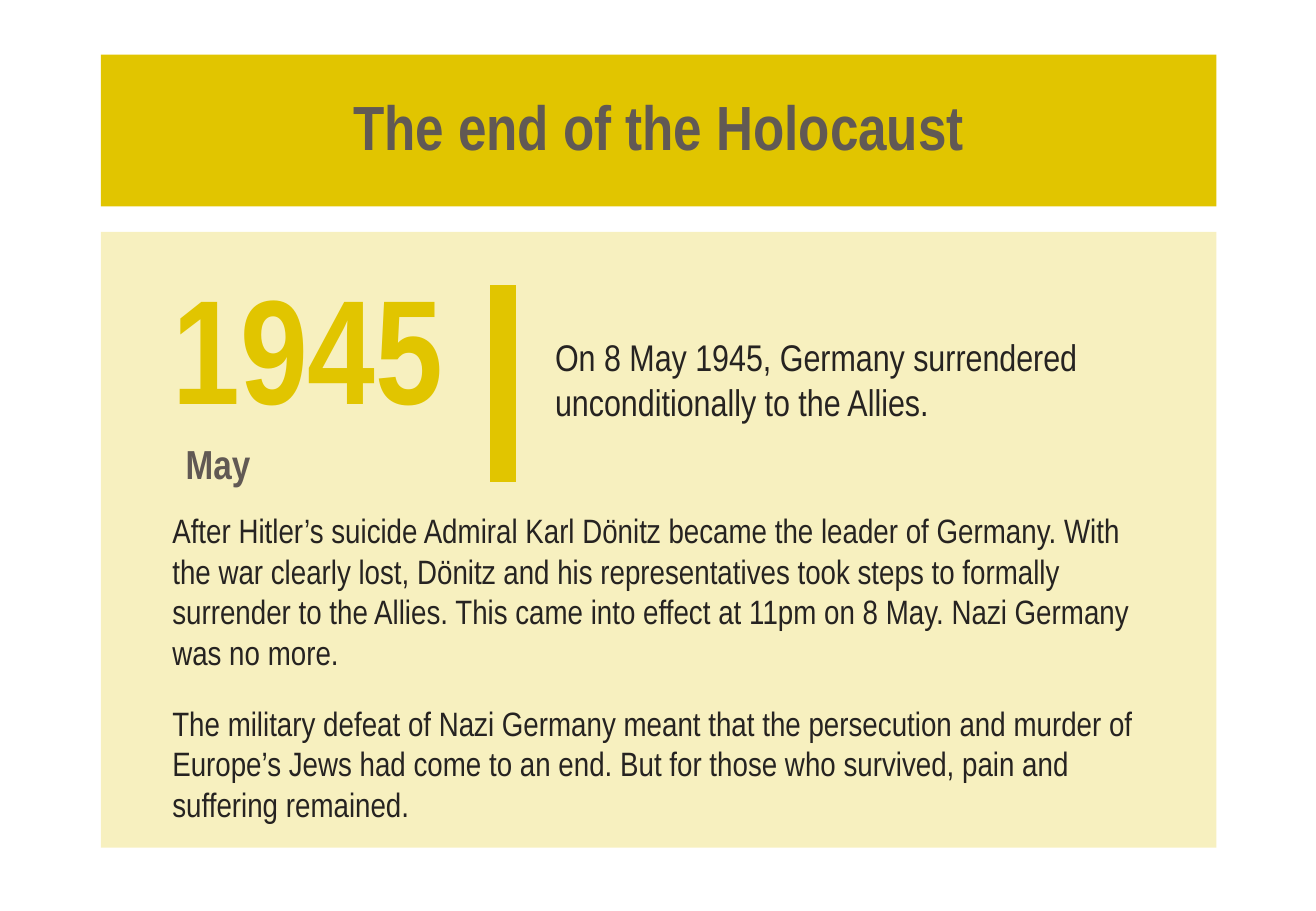
from lxml.etree import SubElement
from pptx import Presentation
from pptx.dml.color import RGBColor
from pptx.enum.shapes import MSO_CONNECTOR, MSO_SHAPE
from pptx.enum.text import MSO_ANCHOR, MSO_AUTO_SIZE, PP_ALIGN
from pptx.oxml.ns import qn
from pptx.util import Pt

PX = 9144
GOLD, GREY, INK = "E1C500", "615954", "262321"


def rgb(value):
    return RGBColor.from_string(value)


def write(sp, box, lines, size, color, bold=False):
    sp.left, sp.top, sp.width, sp.height = [v * PX for v in box]
    tf = sp.text_frame
    tf.word_wrap = True
    tf.auto_size = MSO_AUTO_SIZE.NONE
    tf.vertical_anchor = MSO_ANCHOR.MIDDLE
    tf.text = "\n".join(lines)
    for p in tf.paragraphs:
        p.font.name = "Arial Narrow"
        p.font.size = Pt(size)
        p.font.bold = bold
        p.font.color.rgb = rgb(color)
    return tf.paragraphs


prs = Presentation()
prs.slide_width, prs.slide_height = 1083 * PX, 750 * PX
s = prs.slides.add_slide(prs.slide_layouts[5])

title = s.shapes.title
title.fill.solid()
title.fill.fore_color.rgb = rgb(GOLD)
p = write(title, (83, 45, 918, 125), ["The end of the Holocaust"], 37, GREY, True)[0]
p.alignment = PP_ALIGN.CENTER
p.line_spacing = 0.9

panel = s.shapes.add_shape(MSO_SHAPE.RECTANGLE, 83 * PX, 191 * PX, 918 * PX, 507 * PX)
panel.shadow.inherit = False
panel.line.fill.background()
panel.fill.solid()
panel.fill.fore_color.rgb = rgb(GOLD)
tint = panel.fill._xPr.find(qn("a:solidFill"))[0]
SubElement(tint, qn("a:alpha")).set("val", "25000")

body = [
    "After Hitler’s suicide Admiral Karl Dönitz became the leader of Germany. "
    "With the war clearly lost, Dönitz and his representatives took steps to formally "
    "surrender to the Allies. This came into effect at 11pm on 8 May. "
    "Nazi Germany was no more.",
    "The military defeat of Nazi Germany meant that the persecution and murder of "
    "Europe’s Jews had come to an end. But for those who survived, pain and "
    "suffering remained.",
]
for p in write(s.shapes.add_textbox(0, 0, 0, 0), (132, 455, 827, 188), body, 20, INK):
    p.space_after = Pt(18)

year, month = write(s.shapes.add_textbox(0, 0, 0, 0), (132, 226, 264, 188),
                    ["1945", "May"], 88, GOLD, True)
year.line_spacing = month.line_spacing = 0.8
month.space_before = Pt(9)
month.font.size = Pt(24)
month.font.color.rgb = rgb(GREY)
month._p.get_or_add_pPr().set("marL", str(11 * PX))

bar = s.shapes.add_connector(MSO_CONNECTOR.STRAIGHT, 414 * PX, 235 * PX, 414 * PX, 397 * PX)
bar.line.color.rgb = rgb(GOLD)
bar.line.width = Pt(15)
SubElement(bar._element.spPr, qn("a:effectLst"))

write(s.shapes.add_textbox(0, 0, 0, 0), (447, 218, 504, 188),
      ["On 8 May 1945, Germany surrendered unconditionally to the Allies."], 22, INK)

prs.save("out.pptx")
